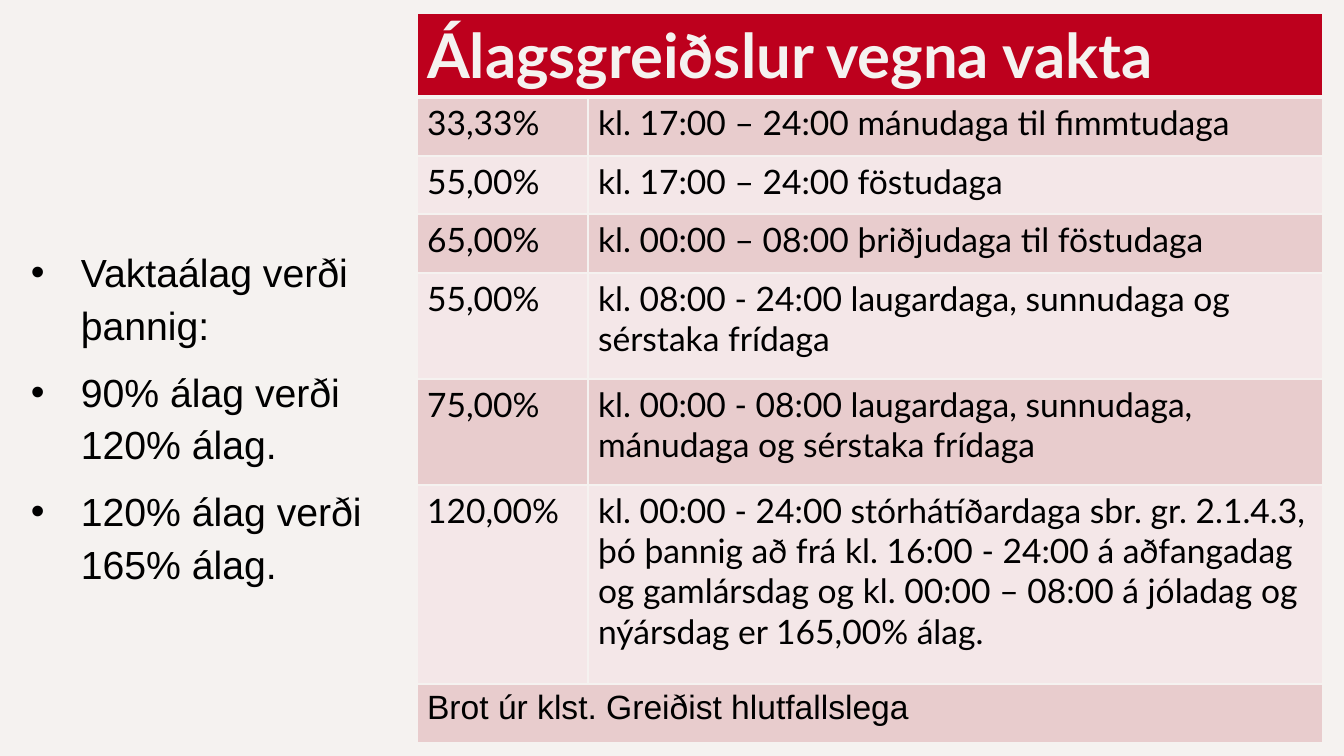
import pptx
import pptx.util
import pptx.dml.color
import pptx.enum.text
import pptx.oxml
import pptx.oxml.ns
import lxml.etree

RGB = pptx.dml.color.RGBColor
PAPER = RGB(0xF5, 0xF2, 0xF0)
RED = RGB(0xBD, 0x00, 0x1D)
ROSE = RGB(0xE8, 0xCC, 0xCD)
BLUSH = RGB(0xF4, 0xE7, 0xE8)
BLACK = RGB(0, 0, 0)

HEAD = "Álagsgreiðslur vegna vakta"
FOOT = "Brot úr klst. Greiðist hlutfallslega"
RATES = [
    ("33,33%", "kl. 17:00 – 24:00 mánudaga til fimmtudaga"),
    ("55,00%", "kl. 17:00 – 24:00 föstudaga"),
    ("65,00%", "kl. 00:00 – 08:00 þriðjudaga til föstudaga"),
    ("55,00%", "kl. 08:00 - 24:00 laugardaga, sunnudaga og sérstaka frídaga"),
    ("75,00%", "kl. 00:00 - 08:00 laugardaga, sunnudaga, mánudaga og sérstaka frídaga"),
    ("120,00%", "kl. 00:00 - 24:00 stórhátíðardaga sbr. gr. 2.1.4.3, þó þannig að "
                "frá kl. 16:00 - 24:00 á aðfangadag og gamlársdag og "
                "kl. 00:00 – 08:00 á jóladag og nýársdag er 165,00% álag."),
]
POINTS = ["Vaktaálag verði þannig:", "90% álag verði 120% álag.", "120% álag verði 165% álag."]
COLS = [171, 735]
ROWS = [82, 59, 58, 59, 106, 106, 199, 59]


def px(num):
    """Turn px into EMU."""
    return pptx.util.Emu(round(num * 914400 / 100.8))


def add(parent, tag, **attrs):
    """Append a drawing element with the given attributes."""
    node = lxml.etree.SubElement(parent, pptx.oxml.ns.qn(tag))
    for key, val in attrs.items():
        node.set(key, str(val))
    return node


def write(para, text, size=24, font="Lato", color=BLACK, bold=False):
    """Write one formatted run into a paragraph."""
    run = para.add_run()
    run.text = text
    run.font.size = pptx.util.Pt(size)
    run.font.name = font
    run.font.bold = bold
    run.font.color.rgb = color


def edge(cell, low=1, top=1):
    """Draw the cell borders, with widths in points."""
    props = cell._tc.get_or_add_tcPr()
    sides = [("a:lnL", 1), ("a:lnR", 1), ("a:lnT", top), ("a:lnB", low)]
    for spot, (tag, wide) in enumerate(sides):
        line = add(props, tag, w=pptx.util.Pt(wide))
        add(add(line, "a:solidFill"), "a:srgbClr", val=PAPER)
        props.insert(spot, line)


def list_box(slide, left, top, width, height):
    """Place the bullet list in the given box."""
    frame = slide.shapes.add_textbox(px(left), px(top), px(width), px(height)).text_frame
    frame.word_wrap = True
    for spot, text in enumerate(POINTS):
        para = frame.add_paragraph() if spot else frame.paragraphs[0]
        para.line_spacing = 1.12
        para.space_after = pptx.util.Pt(10)
        props = para._p.get_or_add_pPr()
        props.set("marL", str(px(50)))
        props.set("indent", str(-px(50)))
        add(props, "a:buFont", typeface="Arial")
        add(props, "a:buChar", char="•")
        write(para, text, size=28, font="Arial")


def rate_grid(slide, left, top):
    """Place the table of rates with its top left corner at the given point."""
    frame = slide.shapes.add_table(len(ROWS), len(COLS), px(left), px(top),
                                   px(sum(COLS)), px(sum(ROWS)))
    grid = frame.table
    for col, wide in zip(grid.columns, COLS):
        col.width = px(wide)
    last = len(ROWS) - 1
    texts = [(HEAD, ""), *RATES, (FOOT, "")]
    for row, (tall, pair) in enumerate(zip(ROWS, texts)):
        grid.rows[row].height = px(tall)
        for col, text in enumerate(pair):
            cell = grid.cell(row, col)
            cell.fill.solid()
            cell.fill.fore_color.rgb = RED if row == 0 else ROSE if row % 2 else BLUSH
            edge(cell, low=3 if row == 0 else 1, top=3 if row == 1 else 1)
            style = {}
            if row == 0:
                style = dict(size=44, color=PAPER, bold=True)
            elif row == last:
                style = dict(font="Arial")
            if text:
                write(cell.text_frame.paragraphs[0], text, **style)
    for row in (0, last):
        grid.cell(row, 0).merge(grid.cell(row, 1))


def main():
    """Build the slide and save it."""
    deck = pptx.Presentation()
    deck.slide_width, deck.slide_height = px(1344), px(756)
    slide = deck.slides.add_slide(deck.slide_layouts[6])
    slide.background.fill.solid()
    slide.background.fill.fore_color.rgb = PAPER
    rate_grid(slide, 417, 13)
    list_box(slide, 21, 238, 367, 341)
    deck.save("out.pptx")


if __name__ == "__main__":
    main()
